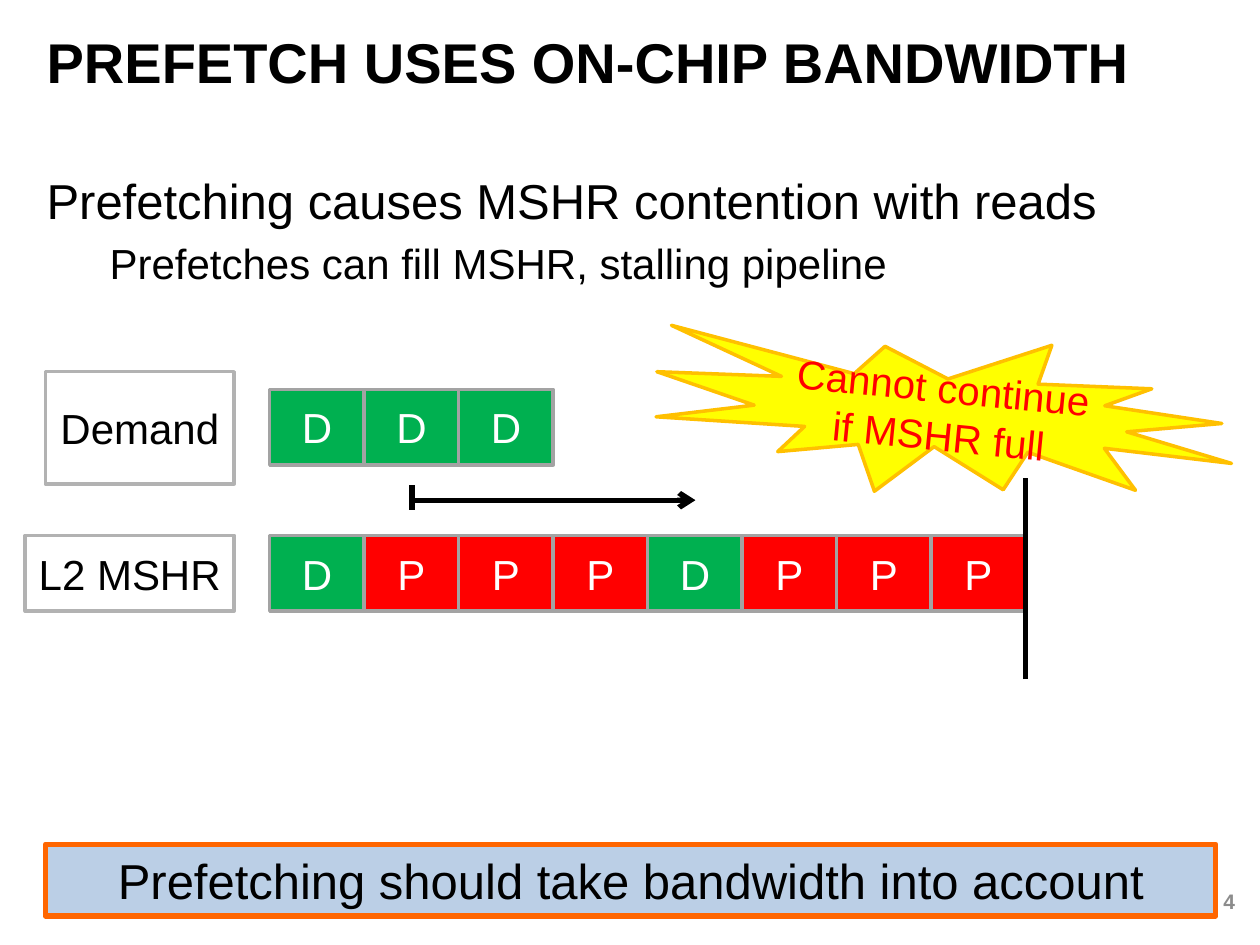
from pptx import Presentation
from pptx.dml.color import RGBColor
from pptx.enum.shapes import MSO_CONNECTOR, MSO_SHAPE
from pptx.enum.text import MSO_ANCHOR, PP_ALIGN
from pptx.oxml.ns import qn
from pptx.util import Inches, Pt
from lxml.etree import SubElement

HUES = {
    "black": "000000", "white": "FFFFFF", "red": "FF0000", "green": "00B050",
    "edge": "A3A3A3", "frame": "B2B2B2", "pale": "BBCFE6", "orange": "FF6600",
    "yellow": "FFFF00", "gold": "FFC000", "grey": "8C8C8C",
}
COLS, ROWS = 100, 75
WIDTH, HEIGHT = Inches(10), Inches(7.5)


def hue(name):
    return RGBColor.from_string(HUES[name])


class Deck:
    font = "Arial"

    def __init__(self):
        self.prs = Presentation()
        self.prs.slide_width, self.prs.slide_height = WIDTH, HEIGHT
        self.slide = self.prs.slides.add_slide(self.prs.slide_layouts[1])

    def grid(self, col, row):
        return round(WIDTH * col / COLS), round(HEIGHT * row / ROWS)

    def place(self, shape, col, row, wide, high):
        shape.left, shape.top = self.grid(col, row)
        shape.width, shape.height = self.grid(wide, high)

    def style(self, par, size, color="black", bold=False, align=PP_ALIGN.LEFT):
        par.alignment = align
        font = par.font
        font.name, font.size, font.bold = self.font, Pt(size), bold
        font.color.rgb = hue(color)

    def title(self, text, *area):
        shape = self.slide.shapes.title
        self.place(shape, *area)
        frame = shape.text_frame
        frame.text = text
        frame.vertical_anchor = MSO_ANCHOR.MIDDLE
        self.style(frame.paragraphs[0], 32, bold=True)

    def body(self, items, *area):
        shape = self.slide.placeholders[1]
        self.place(shape, *area)
        frame = shape.text_frame
        for level, (text, size) in enumerate(items):
            par = frame.add_paragraph() if level else frame.paragraphs[0]
            par.text, par.level = text, level
            props = par._p.get_or_add_pPr()
            props.set("marL", str(Inches(0.5 * level)))
            props.set("indent", "0")
            par.space_before = Pt(5 * level)
            SubElement(props, qn("a:buNone"))
            self.style(par, size)

    def number(self, text, *area):
        left, top = self.grid(*area[:2])
        box = self.slide.shapes.add_textbox(left, top, *self.grid(*area[2:]))
        frame = box.text_frame
        frame.word_wrap = True
        frame.vertical_anchor = MSO_ANCHOR.MIDDLE
        frame.text = text
        self.style(frame.paragraphs[0], 12, "grey", True, PP_ALIGN.RIGHT)

    def shape(self, text, area, fill, edge, color="black", size=24, width=2,
              kind=MSO_SHAPE.RECTANGLE):
        shape = self.slide.shapes.add_shape(
            kind, *self.grid(*area[:2]), *self.grid(*area[2:]))
        shape.shadow.inherit = False
        shape.fill.solid()
        shape.fill.fore_color.rgb = hue(fill)
        shape.line.color.rgb = hue(edge)
        shape.line.width = Pt(width)
        frame = shape.text_frame
        frame.word_wrap = True
        frame.margin_left = frame.margin_right = Inches(0.05)
        frame.vertical_anchor = MSO_ANCHOR.MIDDLE
        frame.text = text
        self.style(frame.paragraphs[0], size, color, align=PP_ALIGN.CENTER)
        return shape

    def queue(self, marks, col, row, wide=7.5, high=6):
        for i, mark in enumerate(marks):
            fill = "green" if mark == "D" else "red"
            self.shape(mark, (col + i * wide, row, wide, high),
                       fill, "edge", "white")

    def line(self, start, end, arrow=False):
        line = self.slide.shapes.add_connector(
            MSO_CONNECTOR.STRAIGHT, *self.grid(*start), *self.grid(*end))
        line.line.color.rgb = hue("black")
        line.line.width = Pt(3)
        if arrow:
            SubElement(line.line._get_or_add_ln(), qn("a:tailEnd"), type="arrow")
        SubElement(line._element.spPr, qn("a:effectLst"))


def main():
    deck = Deck()
    deck.title("PREFETCH USES ON-CHIP BANDWIDTH", 2.7, 2.2, 91.7, 5.3)
    deck.body([("Prefetching causes MSHR contention with reads", 28),
               ("Prefetches can fill MSHR, stalling pipeline", 24)],
              2.7, 13, 91.7, 16.6)
    deck.number("4", 75.7, 69.5, 23.3, 4)
    deck.shape("Prefetching should take bandwidth into account",
               (3.6, 67, 92.9, 5.7), "pale", "orange", size=28, width=3)

    deck.shape("Demand", (3.6, 29.5, 15, 8.9), "white", "frame")
    deck.shape("L2 MSHR", (2, 42.5, 16.6, 6), "white", "frame")
    deck.queue("DDD", 21.4, 30.9)
    deck.queue("DPPPDPPP", 21.4, 42.5)

    deck.line((32.7, 39.7), (55.2, 39.7), arrow=True)
    deck.line((32.7, 38.5), (32.7, 40.5))
    deck.line((81.4, 53.9), (81.4, 37.9))
    burst = deck.shape("Cannot continue if MSHR full", (51.9, 26.6, 46.1, 12.9),
                       "yellow", "gold", "red", 23, kind=MSO_SHAPE.EXPLOSION1)
    burst.rotation = 5.6
    deck.prs.save("out.pptx")


if __name__ == "__main__":
    main()
